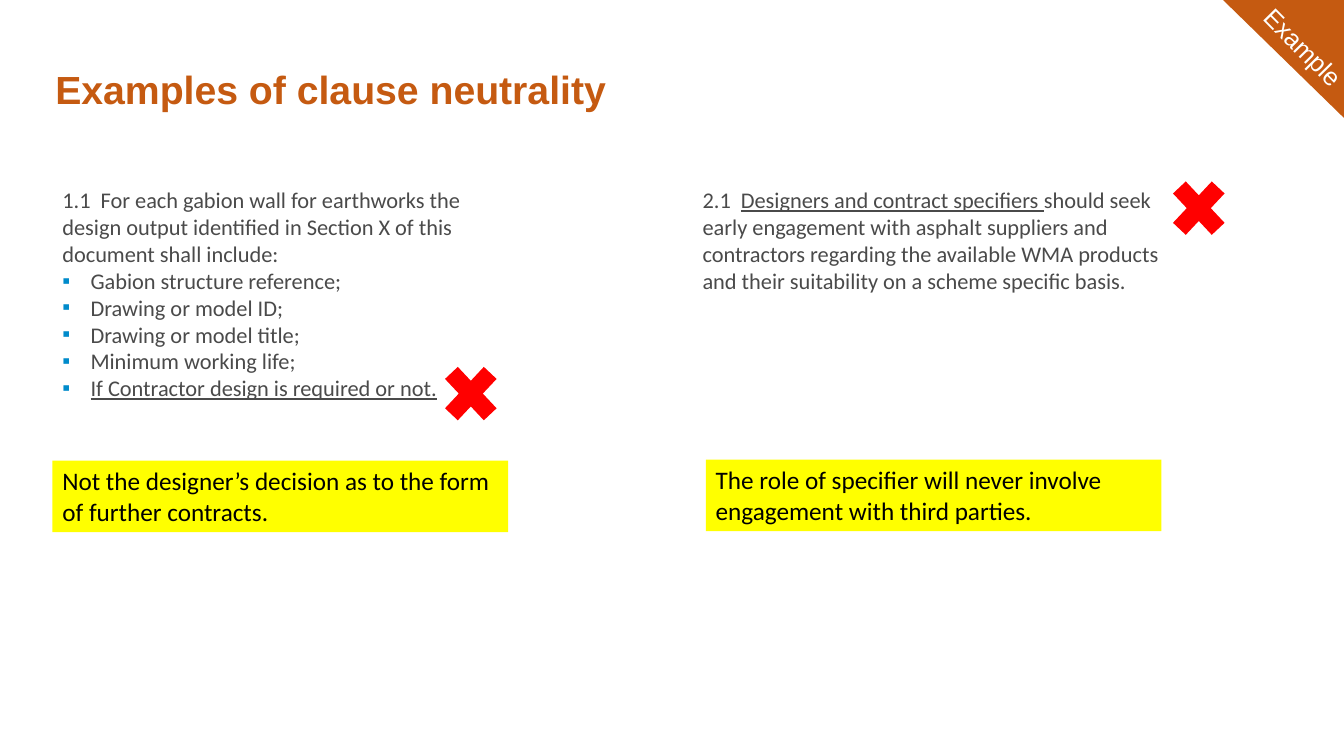
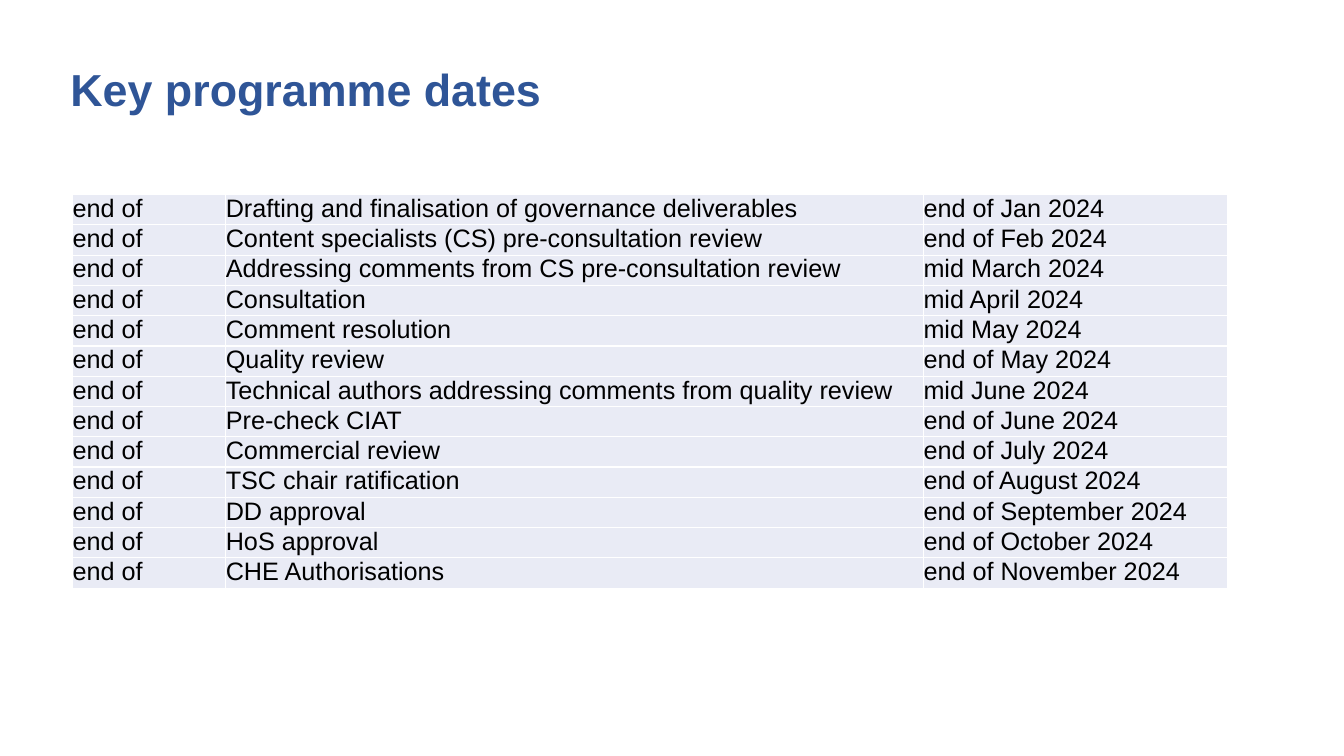
from lxml import etree
from pptx import Presentation
from pptx import util as u
from pptx.dml.color import RGBColor
from pptx.enum import shapes, text
from pptx.oxml import ns

Inches, Pt = u.Inches, u.Pt

ORANGE = RGBColor(0xC5, 0x5A, 0x11)
BLUE = RGBColor(0x2F, 0x55, 0x97)
GREY = RGBColor(0x4A, 0x4A, 0x4A)
BULLET = RGBColor(0x00, 0x8B, 0xCB)
YELLOW = RGBColor(0xFF, 0xFF, 0x00)
RED = RGBColor(0xFF, 0x00, 0x00)
CELL = RGBColor(0xE9, 0xEB, 0xF5)
BLACK = RGBColor(0, 0, 0)
WHITE = RGBColor(0xFF, 0xFF, 0xFF)

BODY = {"name": "Calibri", "size": Pt(16), "color": GREY}
NOTE = {"name": "Calibri", "size": Pt(18), "color": BLACK}
TABLE = {"name": "Arial", "size": Pt(18), "color": BLACK}
RIBBON = {"name": "Arial", "size": Pt(18), "color": WHITE}
TITLE = {"name": "Arial", "bold": True}

CONTRACT_CLAUSE = [
    "1.1\tFor each gabion wall for earthworks the design output identified "
    "in Section X of this document shall include:",
]
CONTRACT_ITEMS = [
    ("Gabion structure reference;", False),
    ("Drawing or model ID;", False),
    ("Drawing or model title;", False),
    ("Minimum working life;", False),
    ("If Contractor design is required or not.", True),
]
DATES = [
    ("Drafting and finalisation of governance deliverables", "end of Jan 2024"),
    ("Content specialists (CS) pre-consultation review", "end of Feb 2024"),
    ("Addressing comments from CS pre-consultation review", "mid March 2024"),
    ("Consultation", "mid April 2024"),
    ("Comment resolution", "mid May 2024"),
    ("Quality review", "end of May 2024"),
    ("Technical authors addressing comments from quality review", "mid June 2024"),
    ("Pre-check CIAT", "end of June 2024"),
    ("Commercial review", "end of July 2024"),
    ("TSC chair ratification", "end of August 2024"),
    ("DD approval", "end of September 2024"),
    ("HoS approval", "end of October 2024"),
    ("CHE Authorisations", "end of November 2024"),
]


def add_run(p, words, style, **extra):
    r = p.add_run()
    r.text = words
    for key, value in {**style, **extra}.items():
        if key == "color":
            r.font.color.rgb = value
        else:
            setattr(r.font, key, value)


def add_text(s, left, top, width, height, wrap=True):
    sp = s.shapes.add_textbox(Inches(left), Inches(top), Inches(width), Inches(height))
    sp.text_frame.word_wrap = wrap
    return sp


def add_shape(s, kind, left, top, width, height, color):
    sp = s.shapes.add_shape(kind, Inches(left), Inches(top), Inches(width), Inches(height))
    sp.shadow.inherit = False
    sp.fill.solid()
    sp.fill.fore_color.rgb = color
    sp.line.fill.background()
    return sp


def add_title(s, words, left, size, color):
    tf = add_text(s, left, 0.4, 12.73 - left, 1.03).text_frame
    tf.vertical_anchor = text.MSO_ANCHOR.MIDDLE
    p = tf.paragraphs[0]
    p.line_spacing = 0.9
    add_run(p, words, TITLE, size=Pt(size), color=color)


def add_ribbon(s):
    add_shape(s, shapes.MSO_SHAPE.RIGHT_TRIANGLE, 12.13, 0, 1.21, 1.18, ORANGE).rotation = 180
    sp = add_text(s, 12.34, 0.27, 1.18, 0.4, wrap=False)
    sp.rotation = 45.4
    add_run(sp.text_frame.paragraphs[0], "Example", RIBBON)


def add_clause(s, left, parts):
    tf = add_text(s, left, 1.8, 4.77, 5.23).text_frame
    p = tf.paragraphs[0]
    tabs = etree.SubElement(p._p.get_or_add_pPr(), ns.qn("a:tabLst"))
    etree.SubElement(tabs, ns.qn("a:tab"), pos=str(Inches(0.38)), algn="l")
    for i, words in enumerate(parts):
        add_run(p, words, BODY, underline=i == 1)
    return tf


def add_bullet(tf, words, underline):
    p = tf.add_paragraph()
    pPr = p._p.get_or_add_pPr()
    pPr.set("marL", str(Inches(0.28)))
    pPr.set("indent", str(-Inches(0.28)))
    color = etree.SubElement(pPr, ns.qn("a:buClr"))
    etree.SubElement(color, ns.qn("a:srgbClr"), val=str(BULLET))
    etree.SubElement(pPr, ns.qn("a:buFont"), typeface="Arial")
    etree.SubElement(pPr, ns.qn("a:buChar"), char="▪")
    add_run(p, words, BODY, underline=underline)


def add_note(s, left, top, words):
    sp = add_shape(s, shapes.MSO_SHAPE.RECTANGLE, left, top, 4.52, 0.71, YELLOW)
    tf = sp.text_frame
    tf.word_wrap = True
    tf.vertical_anchor = text.MSO_ANCHOR.TOP
    p = tf.paragraphs[0]
    p.alignment = text.PP_ALIGN.LEFT
    add_run(p, words, NOTE)


def add_cross(s, left, top):
    add_shape(s, shapes.MSO_SHAPE.MATH_MULTIPLY, left, top, 0.74, 0.79, RED)


def add_dates(s, rows, left, top, widths, row_height):
    table = s.shapes.add_table(
        len(rows), len(widths), Inches(left), Inches(top),
        Inches(sum(widths)), Inches(row_height * len(rows))).table
    table.first_row = table.horz_banding = False
    for column, width in zip(table.columns, widths):
        column.width = Inches(width)
    for row, values in zip(table.rows, rows):
        row.height = Inches(row_height)
        for cell, words in zip(row.cells, values):
            for side in ("left", "right", "top", "bottom"):
                setattr(cell, f"margin_{side}", 0)
            cell.fill.solid()
            cell.fill.fore_color.rgb = CELL
            add_run(cell.text_frame.paragraphs[0], words, TABLE)


def build_neutrality(s):
    add_ribbon(s)
    add_title(s, "Examples of clause neutrality", 0.45, 28, ORANGE)
    tf = add_clause(s, 0.52, CONTRACT_CLAUSE)
    for words, underline in CONTRACT_ITEMS:
        add_bullet(tf, words, underline)
    add_clause(s, 6.87, [
        "2.1\t",
        "Designers and contract specifiers ",
        "should seek early engagement with asphalt suppliers and contractors "
        "regarding the available WMA products and their suitability on a "
        "scheme specific basis.",
    ])
    add_note(s, 0.52, 4.57, "Not the designer’s decision as to the form of further contracts.")
    add_note(s, 7, 4.56, "The role of specifier will never involve engagement with third parties.")
    add_cross(s, 4.3, 3.51)
    add_cross(s, 11.52, 1.67)


def build_dates(s):
    add_title(s, "Key programme dates", 0.6, 32, BLUE)
    rows = [("end of", stage, date) for stage, date in DATES]
    add_dates(s, rows, 0.72, 1.93, (1.52, 6.92, 3.02), 0.28)


def main():
    prs = Presentation()
    prs.slide_width, prs.slide_height = Inches(13.33), Inches(7.5)
    for build in (build_neutrality, build_dates):
        build(prs.slides.add_slide(prs.slide_layouts[6]))
    prs.save("out.pptx")


if __name__ == "__main__":
    main()
